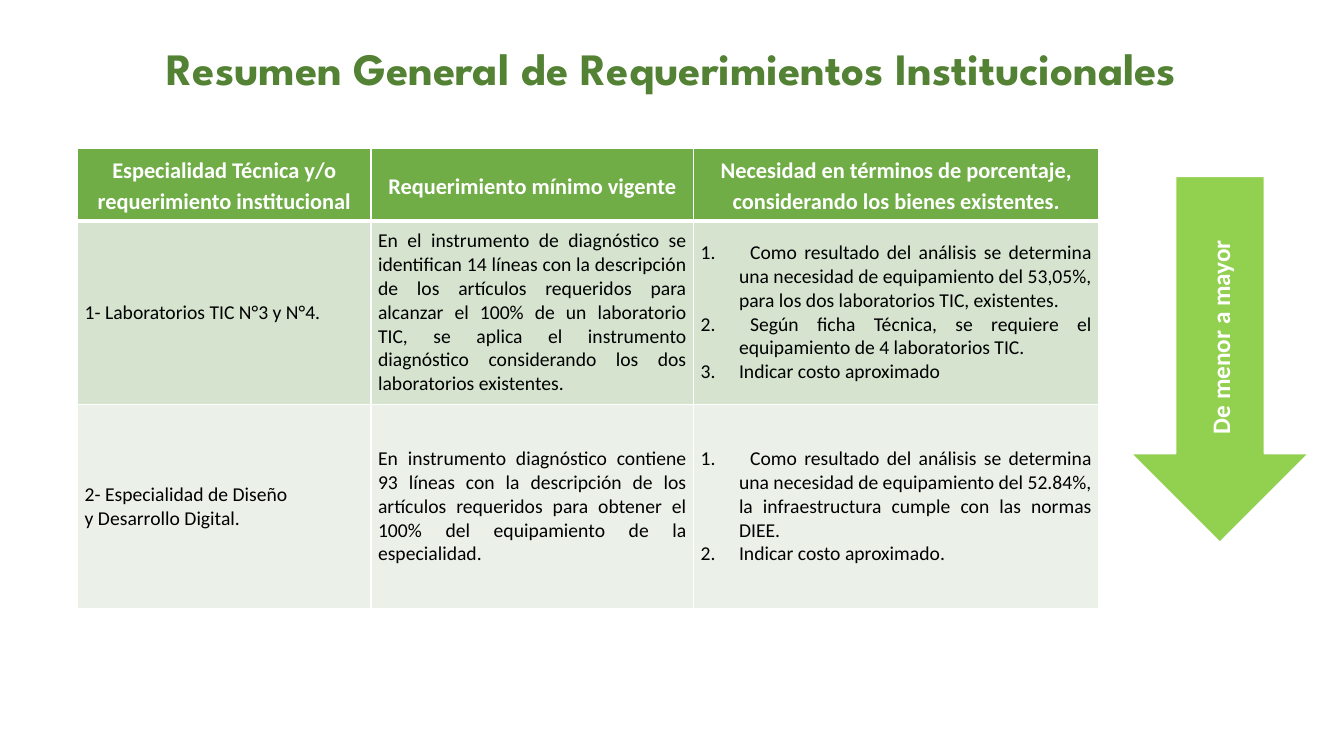
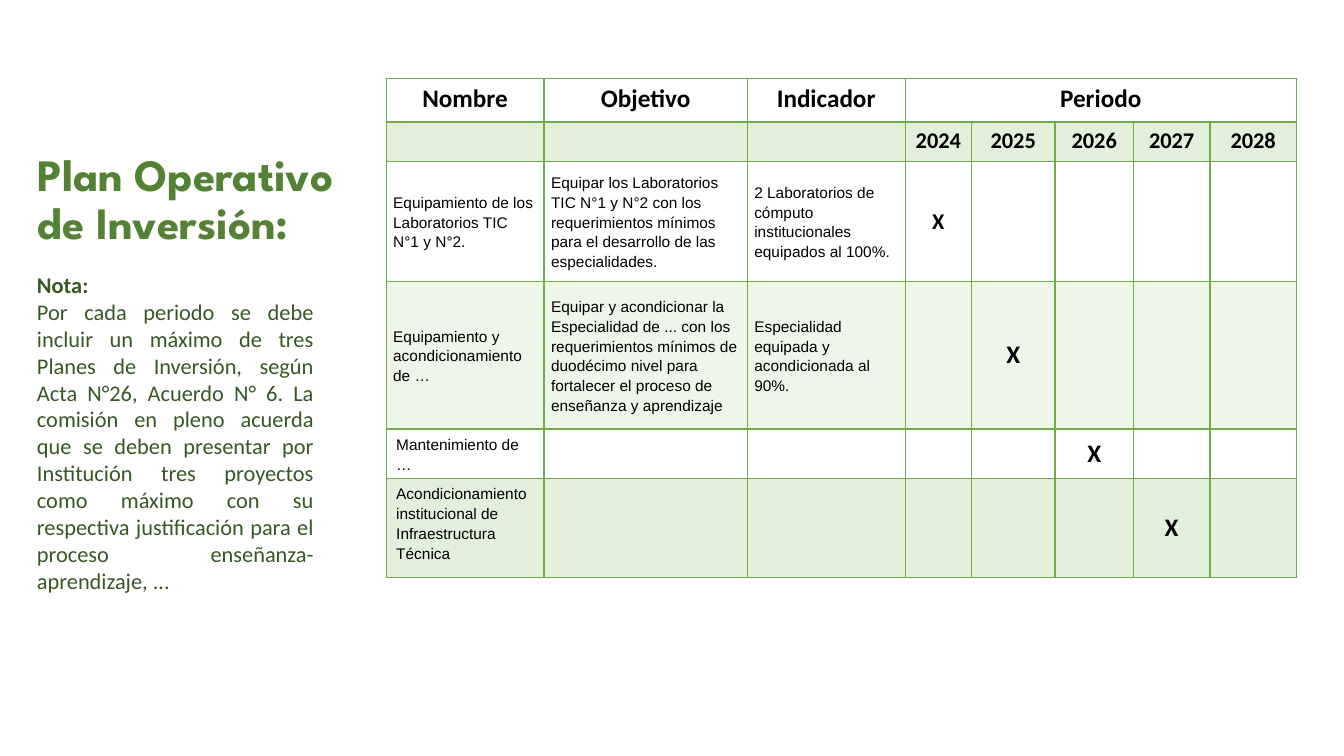
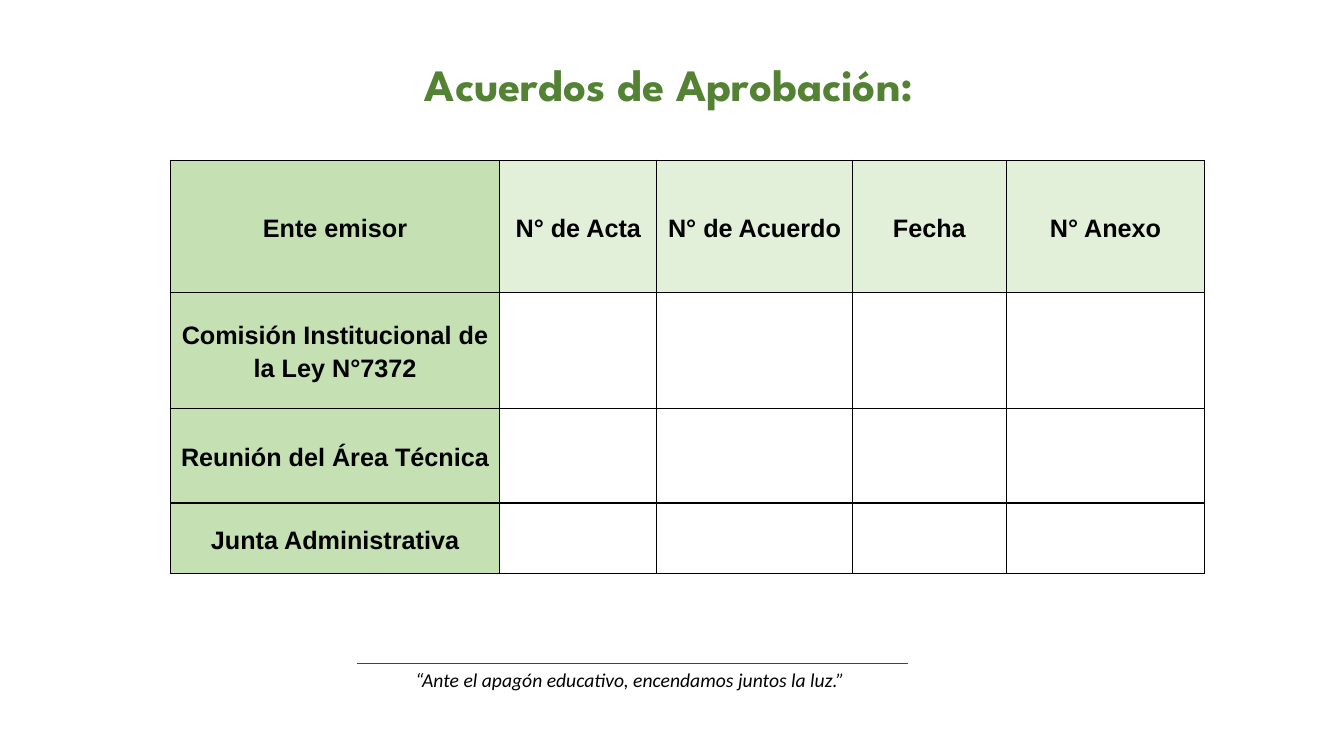
from lxml import etree
from pptx import Presentation
from pptx.dml.color import RGBColor
from pptx.enum.shapes import MSO_CONNECTOR as Connector, MSO_SHAPE as Preset
from pptx.enum.text import MSO_ANCHOR as Anchor, MSO_AUTO_SIZE as AutoSize, PP_ALIGN as Align
from pptx.oxml.ns import qn
from pptx.util import Inches, Pt

SLIDE_SIZE = (13.33, 7.5)
TITLE_ONLY = 5
TITLE_SIZE = 32
TITLE_GREEN, NOTE_GREEN, GREEN, LIME = "548235", "385723", "70AD47", "92D050"
SAGE, PALE_SAGE = "D5E3CF", "EBF1E9"
TINT, PALE_TINT = "E2EFDA", "EEF6E8"
ENTITY_GREEN, HEADING_GREEN = "C5E0B3", "E2EFD9"
NAVY, BLACK, WHITE = "1F4E79", "000000", "FFFFFF"


def color(value):
    return RGBColor.from_string(value)


def inches(box):
    return [Inches(length) for length in box]


def number(paragraph):
    """Number the paragraph with a hanging indent and one tab stop."""
    properties = paragraph._p.get_or_add_pPr()
    properties.set("marL", str(Inches(0.38)))
    properties.set("indent", str(-Inches(0.38)))
    etree.SubElement(properties, qn("a:buFont"), typeface="+mj-lt")
    etree.SubElement(properties, qn("a:buAutoNum"), type="arabicPeriod")
    tabs = etree.SubElement(properties, qn("a:tabLst"))
    etree.SubElement(tabs, qn("a:tab"), pos=str(Inches(0.49)), algn="l")


def write(frame, text, size=18, font="Calibri", ink=BLACK, bold=False, italic=False,
          align=Align.LEFT, spacing=1.0, numbered=False, more=False):
    """Write one paragraph per line of text; with more, add them after the present ones."""
    for index, line in enumerate(text.split("\n")):
        paragraph = frame.add_paragraph() if index or more else frame.paragraphs[0]
        paragraph.text = line
        paragraph.alignment = align
        paragraph.line_spacing = spacing
        if numbered:
            number(paragraph)
        for run in paragraph.runs:
            run.font.size = Pt(size)
            run.font.name = font
            run.font.bold = bold
            run.font.italic = italic
            run.font.color.rgb = color(ink)


def add_titled_slide(presentation, title, box, **text_format):
    slide = presentation.slides.add_slide(presentation.slide_layouts[TITLE_ONLY])
    shape = slide.shapes.title
    shape.left, shape.top, shape.width, shape.height = inches(box)
    frame = shape.text_frame
    frame.word_wrap = True
    frame.auto_size = AutoSize.NONE
    frame.vertical_anchor = Anchor.MIDDLE
    write(frame, title, size=TITLE_SIZE, font="League Spartan", ink=TITLE_GREEN,
          bold=True, **text_format)
    return slide


def add_plain_shape(slide, preset, box, fill=None, line=None):
    shape = slide.shapes.add_shape(preset, *inches(box))
    shape.shadow.inherit = False
    if fill:
        shape.fill.solid()
        shape.fill.fore_color.rgb = color(fill)
    else:
        shape.fill.background()
    if line:
        shape.line.color.rgb = color(line)
        shape.line.width = Pt(1)
    else:
        shape.line.fill.background()
    shape.text_frame.word_wrap = True
    shape.text_frame.vertical_anchor = Anchor.MIDDLE
    return shape


def add_grid(slide, box, columns, rows):
    """Add a table whose columns and rows share the box in the given proportions."""
    table = slide.shapes.add_table(len(rows), len(columns), *inches(box)).table
    table.first_row = table.horz_banding = False
    for parts, shares, length, side in ((table.columns, columns, box[2], "width"),
                                        (table.rows, rows, box[3], "height")):
        for part, share in zip(parts, shares):
            setattr(part, side, Inches(length * share / sum(shares)))
    return table


def set_borders(cell, ink, bottom):
    properties = cell._tc.get_or_add_tcPr()
    widths = {"lnL": 1, "lnR": 1, "lnT": 1, "lnB": bottom}
    for position, (side, width) in enumerate(widths.items()):
        line = etree.Element(qn(f"a:{side}"), w=str(Pt(width)))
        solid = etree.SubElement(line, qn("a:solidFill"))
        etree.SubElement(solid, qn("a:srgbClr"), val=ink)
        properties.insert(position, line)


def fill_cell(cell, text, fill, border, bottom=1, tight=True, anchor=Anchor.MIDDLE,
              **text_format):
    cell.fill.solid()
    cell.fill.fore_color.rgb = color(fill)
    set_borders(cell, border, bottom)
    cell.vertical_anchor = anchor
    if tight or not text:
        cell.margin_left = cell.margin_right = Inches(0.07)
        cell.margin_top = cell.margin_bottom = 0
    if text:
        write(cell.text_frame, text, **text_format)


def add_needs_table(slide, box):
    headings = ("Especialidad Técnica y/o requerimiento institucional",
                "Requerimiento mínimo vigente",
                "Necesidad en términos de porcentaje, considerando los bienes existentes.")
    needs = (
        ("1- Laboratorios TIC N°3 y N°4.",
         "En el instrumento de diagnóstico se identifican 14 líneas con la descripción de los "
         "artículos requeridos para alcanzar el 100% de un laboratorio TIC, se aplica el "
         "instrumento diagnóstico considerando los dos laboratorios existentes.",
         "\tComo resultado del análisis se determina una necesidad de equipamiento del 53,05%, "
         "para los dos laboratorios TIC, existentes.\n"
         "\tSegún ficha Técnica, se requiere el equipamiento de 4 laboratorios TIC.\n"
         "Indicar costo aproximado"),
        ("2- Especialidad de Diseño\ny Desarrollo Digital.",
         "En instrumento diagnóstico contiene 93 líneas con la descripción de los artículos "
         "requeridos para obtener el 100% del equipamiento de la especialidad.",
         "\tComo resultado del análisis se determina una necesidad de equipamiento del 52.84%, "
         "la infraestructura cumple con las normas DIEE.\n"
         "Indicar costo aproximado."),
    )
    table = add_grid(slide, box, (2.91, 3.2, 4.02), (0.72, 1.82, 2.03))
    for column, heading in enumerate(headings):
        fill_cell(table.cell(0, column), heading, GREEN, WHITE, bottom=3, size=16, ink=WHITE,
                  bold=True, align=Align.CENTER, spacing=1.15)
    for row, (texts, fill) in enumerate(zip(needs, (SAGE, PALE_SAGE)), 1):
        for column, text in enumerate(texts):
            fill_cell(table.cell(row, column), text, fill, WHITE, size=14,
                      align=Align.JUSTIFY if column else Align.LEFT, numbered=column == 2)


def add_priority_arrow(slide, box):
    frame = add_plain_shape(slide, Preset.DOWN_ARROW, box, LIME, WHITE).text_frame
    frame._txBody.bodyPr.set("vert", "vert270")
    write(frame, "De menor a mayor", ink=WHITE, bold=True, align=Align.CENTER)


def add_note(slide, box):
    frame = add_plain_shape(slide, Preset.ROUNDED_RECTANGLE, box).text_frame
    write(frame, "Nota:", size=16, ink=NOTE_GREEN, bold=True)
    write(frame, "Por cada periodo se debe incluir un máximo de tres Planes de Inversión, según "
          "Acta N°26, Acuerdo N° 6. La comisión en pleno acuerda que se deben presentar por "
          "Institución tres proyectos como máximo con su respectiva justificación para el "
          "proceso enseñanza-aprendizaje, ...",
          size=16, ink=NOTE_GREEN, align=Align.JUSTIFY, more=True)


def add_plan_table(slide, box):
    headings = ("Nombre", "Objetivo", "Indicador", "Periodo", "", "", "", "")
    first_year = headings.index("Periodo")
    years = [""] * first_year + [str(year) for year in range(2024, 2029)]
    projects = (
        ("Equipamiento de los Laboratorios TIC N°1 y N°2.",
         "Equipar los Laboratorios TIC N°1 y N°2 con los requerimientos mínimos para el "
         "desarrollo de las especialidades.",
         "2 Laboratorios de cómputo institucionales equipados al 100%."),
        ("Equipamiento y acondicionamiento de …",
         "Equipar y acondicionar la Especialidad de ... con los requerimientos mínimos de "
         "duodécimo nivel para fortalecer el proceso de enseñanza y aprendizaje",
         "Especialidad equipada y acondicionada al 90%."),
        ("Mantenimiento de …", "", ""),
        ("Acondicionamiento institucional de Infraestructura Técnica", "", ""),
    )
    table = add_grid(slide, box, (1.57, 2.02, 1.57, 0.66, 0.83, 0.78, 0.76, 0.86),
                     (0.43, 0.39, 1.19, 1.46, 0.49, 0.98))
    heading_format = dict(tight=False, anchor=Anchor.TOP, bold=True, align=Align.CENTER)
    for column, (heading, year) in enumerate(zip(headings, years)):
        fill_cell(table.cell(0, column), heading, WHITE, GREEN, bottom=2, **heading_format)
        fill_cell(table.cell(1, column), year, TINT, GREEN, size=16, **heading_format)
    table.cell(0, first_year).merge(table.cell(0, len(headings) - 1))

    for index, (texts, fill) in enumerate(zip(projects, (WHITE, PALE_TINT, WHITE, TINT))):
        row = index + 2
        detailed = all(texts)
        for column, text in enumerate(texts):
            fill_cell(table.cell(row, column), text, fill, GREEN, tight=detailed,
                      anchor=Anchor.MIDDLE if detailed else Anchor.TOP,
                      size=11, font="Arial", spacing=1.15)
        for column in range(first_year, len(headings)):
            mark = "X" if column == first_year + index else ""
            fill_cell(table.cell(row, column), mark, fill, GREEN, tight=False,
                      size=18 if index else 16, bold=True, align=Align.CENTER)


def add_agreements_table(slide, box):
    headings = ("Ente emisor", "N° de Acta", "N° de Acuerdo", "Fecha", "N° Anexo")
    entities = ("Comisión Institucional de la Ley N°7372", "Reunión del Área Técnica",
                "Junta Administrativa")
    rows = [headings] + [(entity, "", "", "", "") for entity in entities]
    table = add_grid(slide, box, (3.27, 1.56, 1.94, 1.53, 1.97), (1.31, 1.15, 0.94, 0.7))
    for row, texts in enumerate(rows):
        for column, text in enumerate(texts):
            fill = ENTITY_GREEN if column == 0 else WHITE if row else HEADING_GREEN
            fill_cell(table.cell(row, column), text, fill, BLACK, font="Arial", bold=True,
                      align=Align.CENTER, spacing=1.15)


def add_motto(slide, box):
    """Add the closing motto under a rule that spans the middle half of the box."""
    left, top, width, _ = box
    frame = slide.shapes.add_textbox(*inches(box)).text_frame
    frame.word_wrap = True
    write(frame, "“Ante el apagón educativo, encendamos juntos la luz.”", size=14, italic=True,
          align=Align.CENTER)
    start, end = left + 0.25 * width, left + 0.755 * width
    rule = slide.shapes.add_connector(Connector.STRAIGHT, *inches((start, top, end, top)))
    rule.line.color.rgb = color(NAVY)
    rule.line.width = Pt(0.5)
    etree.SubElement(rule._element.spPr, qn("a:effectLst"))


def main():
    presentation = Presentation()
    presentation.slide_width, presentation.slide_height = inches(SLIDE_SIZE)
    title_style = presentation.slide_master.element.find(f".//{qn('p:titleStyle')}")
    title_style.find(f".//{qn('a:defRPr')}").set("sz", str(TITLE_SIZE * 100))

    summary = add_titled_slide(presentation, "Resumen General de Requerimientos Institucionales",
                               (0.71, -0.05, 11.91, 1.45), align=Align.CENTER)
    add_needs_table(summary, (0.77, 1.47, 10.13, 4.57))
    add_priority_arrow(summary, (11.22, 1.75, 1.76, 3.63))

    plan = add_titled_slide(presentation, "Plan Operativo\vde Inversión:",
                            (0.27, 1.27, 11.5, 1.45), spacing=0.9)
    add_note(plan, (0.11, 2.35, 3.26, 3.88))
    add_plan_table(plan, (3.83, 0.78, 9.03, 4.95))

    approval = add_titled_slide(presentation, "Acuerdos de Aprobación:",
                                (0.62, 0.14, 12.04, 1.45), align=Align.CENTER, spacing=0.9)
    add_agreements_table(approval, (1.69, 1.59, 10.26, 4.1))
    add_motto(approval, (0.84, 6.58, 10.82, 0.34))

    presentation.save("out.pptx")


if __name__ == "__main__":
    main()
